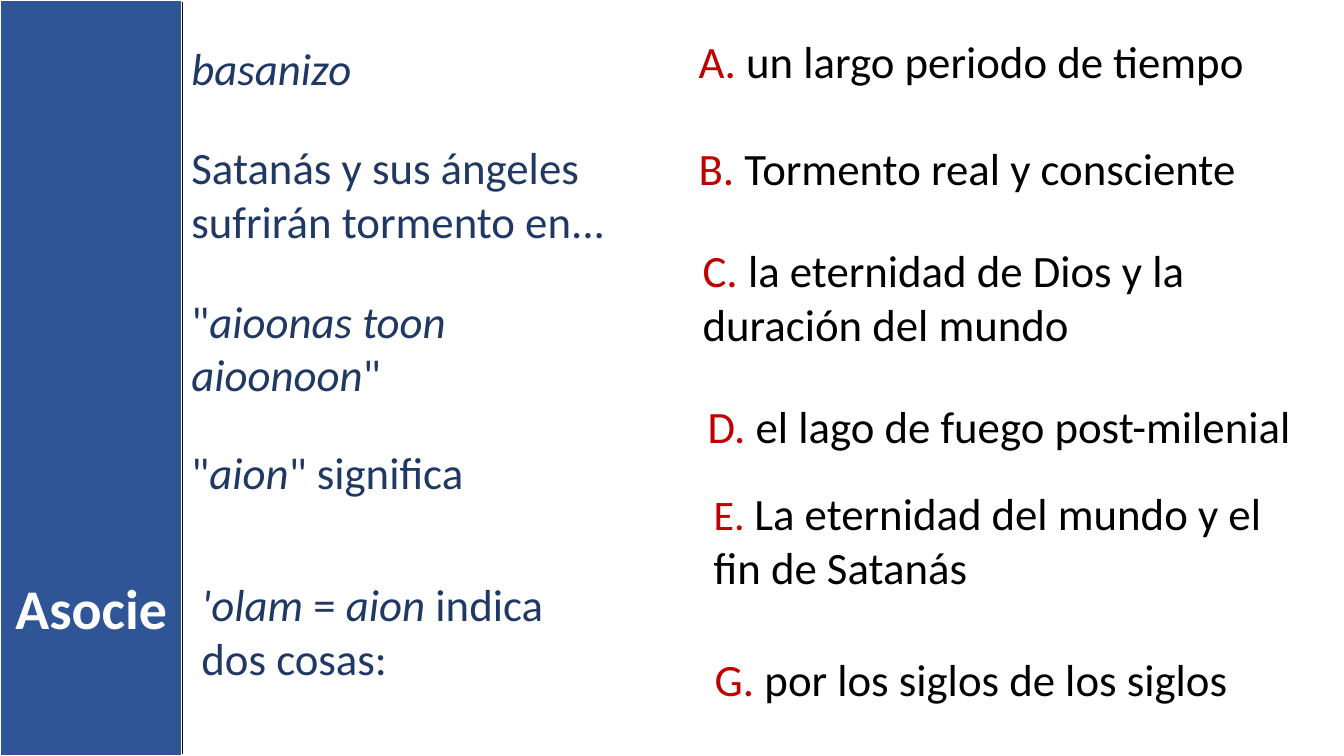
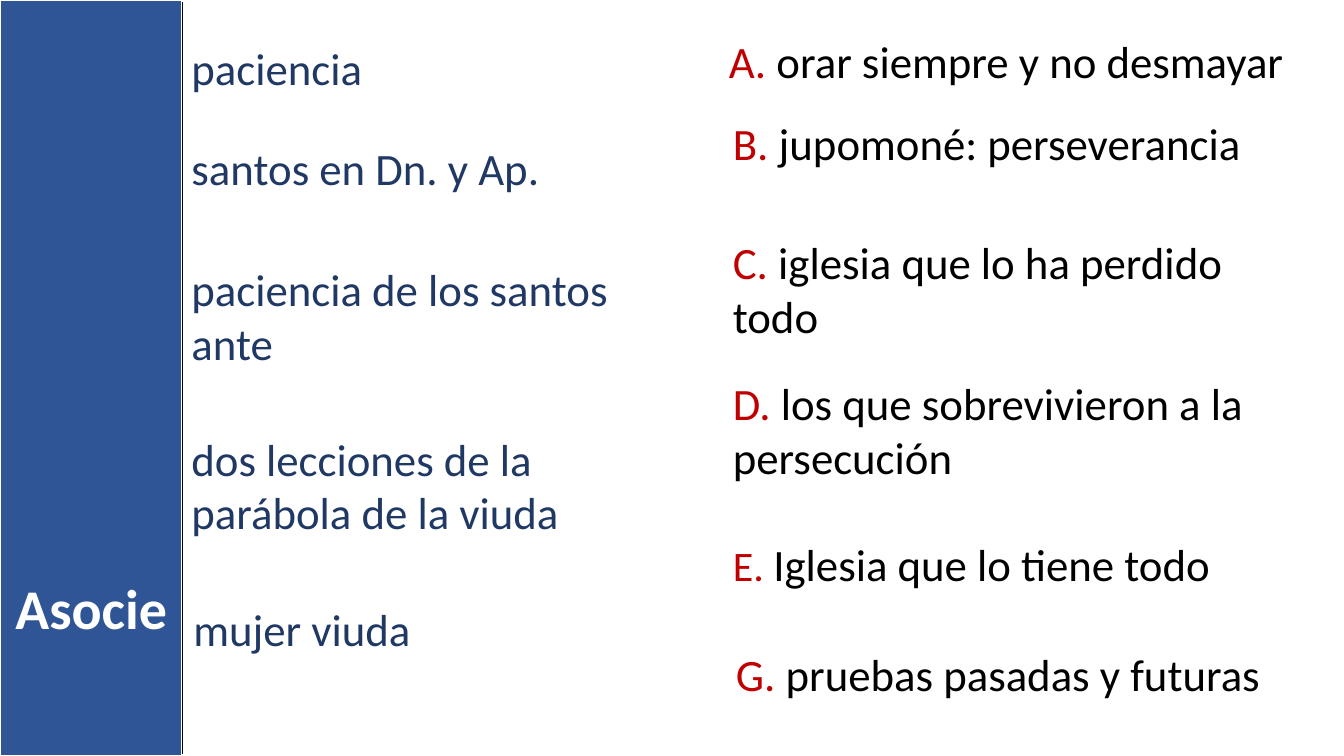
from lxml import etree
from pptx import Presentation
from pptx.dml.color import RGBColor
from pptx.enum.shapes import MSO_CONNECTOR as Connector, MSO_SHAPE as Shape
from pptx.enum.text import MSO_ANCHOR as Anchor, MSO_AUTO_SIZE as AutoSize, PP_ALIGN as Align
from pptx.oxml.ns import qn
from pptx.util import Inches, Pt

WHITE = RGBColor(0xFF, 0xFF, 0xFF)
BLACK = RGBColor(0x00, 0x00, 0x00)
BAND_BLUE = RGBColor(0x2F, 0x55, 0x97)
TERM_BLUE = RGBColor(0x20, 0x38, 0x64)
LETTER_RED = RGBColor(0xC0, 0x00, 0x00)

TITLE_ONLY = 5
SLIDE_WIDTH, SLIDE_HEIGHT = 13.33, 7.5
BAND_WIDTH = 1.81
BOX_HEIGHTS = {1: 0.64, 2: 1.18}  # by number of text lines

# Terms: left, top, width, lines, text (asterisks enclose italics).
# Answers: left, top, width, lines, letter, text.
EXERCISES = [
    {
        "terms": [
            (1.8, 0.35, 4.62, 1, "*basanizo*"),
            (1.8, 1.34, 4.62, 2, "Satanás y sus ángeles sufrirán tormento en..."),
            (1.8, 2.86, 4.43, 2, '"*aioonas toon aioonoon*"'),
            (1.8, 4.36, 4.6, 1, '"*aion*" significa'),
            (1.9, 5.67, 4.13, 2, "*'olam* = *aion* indica dos cosas:"),
        ],
        "answers": [
            (6.83, 0.29, 6.3, 1, "A", "un largo periodo de tiempo"),
            (6.83, 1.35, 6.16, 1, "B", "Tormento real y consciente"),
            (6.87, 2.36, 5.98, 2, "C", "la eternidad de Dios y la duración del mundo"),
            (6.92, 3.91, 6.04, 1, "D", "el lago de fuego post-milenial"),
            (6.98, 4.77, 5.75, 2, "E", "La eternidad del mundo y el fin de Satanás"),
            (6.99, 6.42, 5.82, 1, "G", "por los siglos de los siglos"),
        ],
    },
    {
        "terms": [
            (1.8, 0.35, 5.25, 1, "paciencia"),
            (1.8, 1.35, 4.62, 1, "santos en Dn. y Ap."),
            (1.8, 2.55, 4.92, 2, "paciencia de los santos ante"),
            (1.8, 4.23, 4.6, 2, "dos lecciones de la parábola de la viuda"),
            (1.82, 5.92, 4.41, 1, "mujer viuda"),
        ],
        "answers": [
            (7.13, 0.29, 6.05, 1, "A", "orar siempre y no desmayar"),
            (7.17, 1.1, 5.92, 1, "B", "jupomoné: perseverancia"),
            (7.17, 2.28, 5.74, 2, "C", "iglesia que lo ha perdido todo"),
            (7.17, 3.68, 5.8, 2, "D", "los que sobrevivieron a la persecución"),
            (7.17, 5.28, 5.53, 1, "E", "Iglesia que lo tiene todo"),
            (7.2, 6.37, 5.59, 1, "G", "pruebas pasadas y futuras"),
        ],
    },
]


class MatchingDeck:
    """Holds the deck, its text style and the slide being filled."""

    text_format = {"name": "Calibri", "size": Pt(32), "bold": False, "italic": False}
    frame_format = {
        "word_wrap": True,
        "auto_size": AutoSize.SHAPE_TO_FIT_TEXT,
        "vertical_anchor": Anchor.TOP,
    }

    def __init__(self):
        self.deck = Presentation()
        self.deck.slide_width = Inches(SLIDE_WIDTH)
        self.deck.slide_height = Inches(SLIDE_HEIGHT)
        self.page = None

    def add_page(self, title):
        self.page = self.deck.slides.add_slide(self.deck.slide_layouts[TITLE_ONLY])
        self.add_title(title)
        self.add_band()

    def add_title(self, text):
        title = self.page.shapes.title
        title.left, title.top = Inches(0), Inches(5.64)
        title.width, title.height = Inches(BAND_WIDTH), Inches(0.77)
        para = self.prepare_frame(title)
        para.alignment = Align.CENTER
        self.add_span(para, text, WHITE, size=Pt(40), bold=True)

    def add_band(self):
        """Put the side band behind the title and rule its right edge."""
        band = self.page.shapes.add_shape(
            Shape.RECTANGLE, Inches(0), Inches(0), Inches(BAND_WIDTH), Inches(SLIDE_HEIGHT))
        band.shadow.inherit = False
        band.fill.solid()
        band.fill.fore_color.rgb = BAND_BLUE
        band.line.color.rgb = WHITE
        band.line.width = Pt(1.5)
        self.page.shapes.title.element.addprevious(band.element)

        edge = self.page.shapes.add_connector(
            Connector.STRAIGHT, Inches(BAND_WIDTH), Inches(0.02),
            Inches(BAND_WIDTH), Inches(SLIDE_HEIGHT - 0.02))
        edge.line.color.rgb = BLACK
        edge.line.width = Pt(1)
        etree.SubElement(edge.element.spPr, qn("a:effectLst"))

    def prepare_frame(self, shape):
        for name, value in self.frame_format.items():
            setattr(shape.text_frame, name, value)
        return shape.text_frame.paragraphs[0]

    def add_box(self, left, top, width, lines):
        """Add a text box and return its first paragraph."""
        box = self.page.shapes.add_textbox(
            Inches(left), Inches(top), Inches(width), Inches(BOX_HEIGHTS[lines]))
        return self.prepare_frame(box)

    def add_span(self, para, text, color, **changes):
        span = para.add_run()
        span.text = text
        for name, value in {**self.text_format, **changes}.items():
            setattr(span.font, name, value)
        span.font.color.rgb = color

    def add_term(self, left, top, width, lines, text):
        para = self.add_box(left, top, width, lines)
        for index, part in enumerate(text.split("*")):
            if part:
                self.add_span(para, part, TERM_BLUE, italic=index % 2 == 1)

    def add_answer(self, left, top, width, lines, letter, text):
        para = self.add_box(left, top, width, lines)
        letter_size = Pt(30 if letter == "E" else 32)
        self.add_span(para, f"{letter}. ", LETTER_RED, size=letter_size)
        self.add_span(para, text, BLACK)


def main():
    matching = MatchingDeck()
    for exercise in EXERCISES:
        matching.add_page("Asocie")
        for term in exercise["terms"]:
            matching.add_term(*term)
        for answer in exercise["answers"]:
            matching.add_answer(*answer)
    matching.deck.save("out.pptx")


if __name__ == "__main__":
    main()
